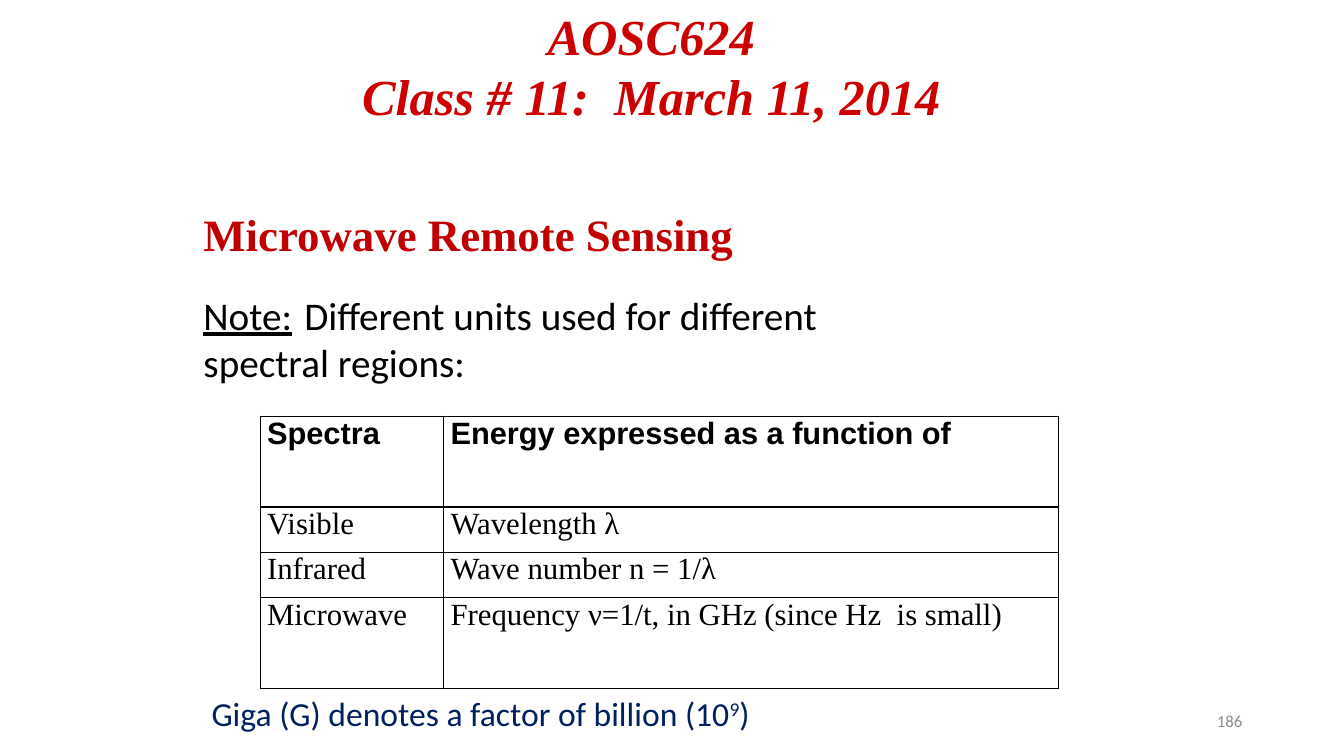
from dataclasses import dataclass

from lxml import etree
from pptx import Presentation
from pptx.dml.color import RGBColor
from pptx.enum import text
from pptx.oxml import ns
from pptx import util as u


@dataclass(frozen=True)
class Theme:
    serif: str = "Times New Roman"
    sans: str = "Calibri"
    header: str = "Arial"
    black: str = "000000"
    title_red: str = "CC0000"
    heading_red: str = "C00000"
    navy: str = "002060"
    grey: str = "8C8C8C"
    title_size: int = 36
    heading_size: int = 32
    body_size: int = 28
    note_size: int = 24
    table_size: int = 22
    number_size: int = 12


def add_span(para, words, *, font, size, color, bold=False, italic=False,
             underline=False, raised=False):
    span = para.add_run()
    span.text = words
    span.font.name = font
    span.font.size = u.Pt(size)
    span.font.color.rgb = RGBColor.from_string(color)
    span.font.bold = bold
    span.font.italic = italic
    span.font.underline = underline
    if raised:
        span._r.get_or_add_rPr().set("baseline", "30000")


def add_borders(cell, color, width):
    """Draw all four edges; the schema wants them ahead of the cell fill."""
    properties = cell._tc.get_or_add_tcPr()
    for index, edge in enumerate(("lnL", "lnR", "lnT", "lnB")):
        line = etree.Element(ns.qn(f"a:{edge}"), w=str(u.Pt(width)))
        fill = etree.SubElement(line, ns.qn("a:solidFill"))
        etree.SubElement(fill, ns.qn("a:srgbClr"), val=color)
        properties.insert(index, line)


class SlideBuilder:
    def __init__(self, slide, theme):
        self.slide = slide
        self.theme = theme

    def text_box(self, left, top, width, height, paragraphs,
                 align=text.PP_ALIGN.LEFT, anchor=text.MSO_ANCHOR.TOP):
        """Each paragraph is (space before in points, [(words, format), ...])."""
        box = self.slide.shapes.add_textbox(
            *map(u.Inches, (left, top, width, height)))
        frame = box.text_frame
        frame.word_wrap = True
        frame.vertical_anchor = anchor
        for index, (gap, spans) in enumerate(paragraphs):
            para = frame.add_paragraph() if index else frame.paragraphs[0]
            para.alignment = align
            para.space_before = u.Pt(gap)
            for words, style in spans:
                add_span(para, words, **style)

    def table(self, left, top, widths, heights, rows):
        table = self.slide.shapes.add_table(
            len(rows), len(widths), u.Inches(left), u.Inches(top),
            u.Inches(sum(widths)), u.Inches(sum(heights))).table
        table.horz_banding = False
        for column, width in zip(table.columns, widths):
            column.width = u.Inches(width)
        for row, height, values in zip(table.rows, heights, rows):
            row.height = u.Inches(height)
            is_header = values is rows[0]
            font = self.theme.header if is_header else self.theme.serif
            for cell, value in zip(row.cells, values):
                cell.margin_left = cell.margin_right = u.Inches(0.07)
                cell.margin_top = cell.margin_bottom = 0
                cell.fill.background()
                add_borders(cell, self.theme.black, 1)
                add_span(cell.text_frame.paragraphs[0], value, font=font,
                         size=self.theme.table_size, color=self.theme.black,
                         bold=is_header)


def main():
    deck = Presentation()
    deck.slide_width, deck.slide_height = u.Inches(13.33), u.Inches(7.5)
    theme = Theme()
    page = SlideBuilder(deck.slides.add_slide(deck.slide_layouts[6]), theme)

    title = dict(font=theme.serif, size=theme.title_size,
                 color=theme.title_red, bold=True, italic=True)
    heading = dict(font=theme.serif, size=theme.heading_size,
                   color=theme.heading_red, bold=True)
    body = dict(font=theme.sans, size=theme.body_size, color=theme.black)
    note = dict(font=theme.sans, size=theme.note_size, color=theme.navy)
    number = dict(font=theme.sans, size=theme.number_size, color=theme.grey)

    page.table(2.58, 4.13, (1.82, 6.1), (0.9, 0.45, 0.45, 0.9), [
        ("Spectra", "Energy expressed as a function of"),
        ("Visible", "Wavelength λ"),
        ("Infrared", "Wave number n = 1/λ"),
        ("Microwave", "Frequency ν=1/t, in GHz (since Hz  is small)"),
    ])
    page.text_box(1.92, 2, 7.33, 2.19, [
        (0, [("Microwave Remote Sensing", heading)]),
        (22, [("Note:", dict(body, underline=True)),
              ("\tDifferent units used for different", body)]),
        (0, [("spectral regions:", body)]),
    ])
    page.text_box(1.67, 0, 9.58, 1.92, [
        (0, [("AOSC624", title)]),
        (0, [("Class # 11:  March 11, 2014", title)]),
    ], align=text.PP_ALIGN.CENTER)
    page.text_box(2, 6.83, 9.67, 0.5, [
        (0, [("Giga (G) denotes a factor of billion (10", note),
             ("9", dict(note, raised=True)), (")", note)]),
    ])
    page.text_box(9.42, 6.95, 3, 0.4, [(0, [("186", number)])],
                  align=text.PP_ALIGN.RIGHT, anchor=text.MSO_ANCHOR.MIDDLE)
    deck.save("out.pptx")


if __name__ == "__main__":
    main()
